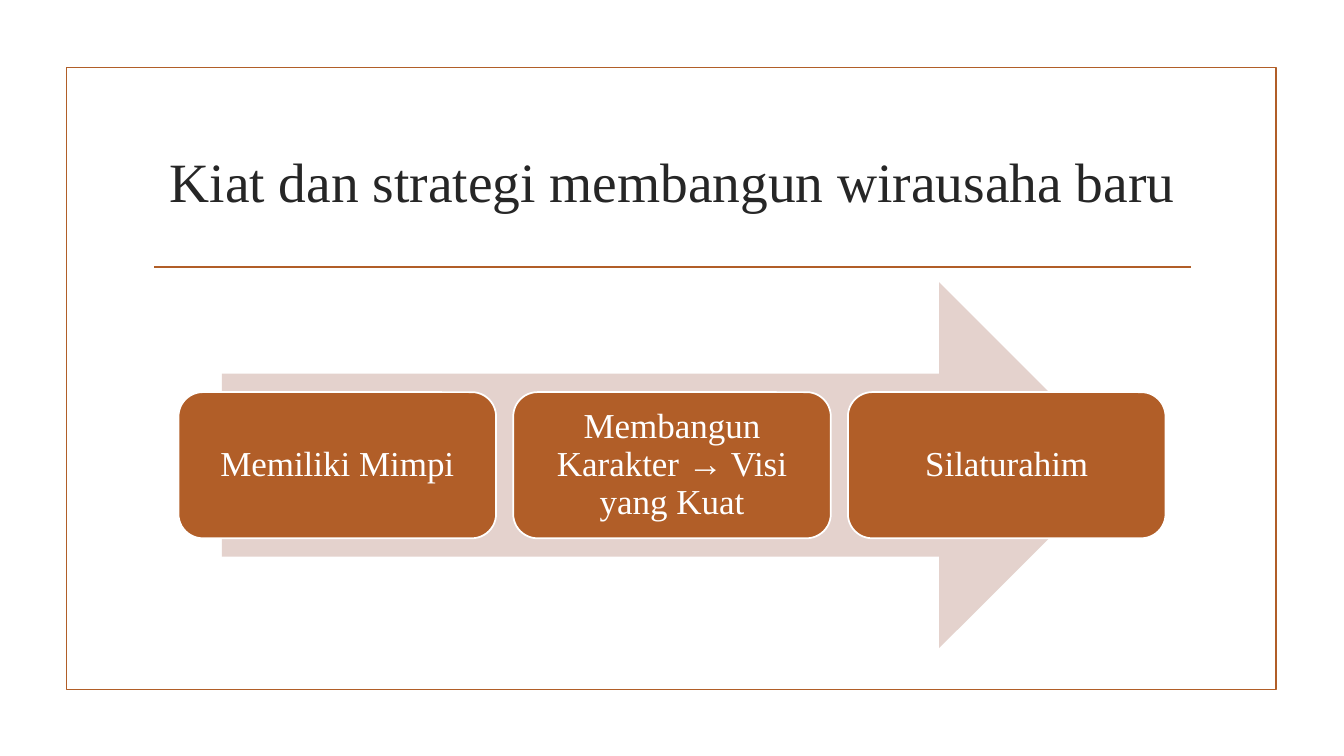
import pptx
import pptx.dml.color
import pptx.enum.shapes
import pptx.enum.text
import pptx.oxml.ns
import pptx.util
from lxml import etree

Inches = pptx.util.Inches
Pt = pptx.util.Pt
RGBColor = pptx.dml.color.RGBColor
Preset = pptx.enum.shapes.MSO_SHAPE

RUST = RGBColor(0xB1, 0x5E, 0x28)
BLUSH = RGBColor(0xE4, 0xD2, 0xCD)
WHITE = RGBColor(0xFF, 0xFF, 0xFF)
CHARCOAL = RGBColor(0x26, 0x26, 0x26)
FONT = "Times New Roman"
LINE_WIDTH = Pt(1.25)

STEPS = ["Memiliki Mimpi", "Membangun Karakter → Visi yang Kuat", "Silaturahim"]
STEP_LEFT = 1.77
STEP_PITCH = 3.32


def write_text(shape, text, size, color, line_spacing=1.0, inset=0.1):
    frame = shape.text_frame
    frame.word_wrap = True
    frame.vertical_anchor = pptx.enum.text.MSO_ANCHOR.MIDDLE
    frame.margin_left = frame.margin_right = Inches(inset)
    frame.margin_top = frame.margin_bottom = Inches(inset)
    paragraph = frame.paragraphs[0]
    paragraph.alignment = pptx.enum.text.PP_ALIGN.CENTER
    paragraph.line_spacing = line_spacing
    run = paragraph.add_run()
    run.text = text
    run.font.name = FONT
    run.font.size = Pt(size)
    run.font.color.rgb = color


def add_preset(slide, preset, left, top, width, height, fill=None, line=None):
    shape = slide.shapes.add_shape(
        preset, Inches(left), Inches(top), Inches(width), Inches(height)
    )
    shape.shadow.inherit = False
    if fill is None:
        shape.fill.background()
    else:
        shape.fill.solid()
        shape.fill.fore_color.rgb = fill
    if line is None:
        shape.line.fill.background()
    else:
        shape.line.color.rgb = line
        shape.line.width = LINE_WIDTH
    return shape


def add_rule(slide, left, right, top):
    rule = slide.shapes.add_connector(
        pptx.enum.shapes.MSO_CONNECTOR.STRAIGHT,
        Inches(left), Inches(top), Inches(right), Inches(top),
    )
    rule.line.color.rgb = RUST
    rule.line.width = LINE_WIDTH
    properties = rule._element.spPr
    etree.SubElement(properties, pptx.oxml.ns.qn("a:effectLst"))


def add_title(slide, text):
    title = slide.shapes.add_textbox(
        Inches(1.42), Inches(1.07), Inches(10.5), Inches(1.43)
    )
    write_text(title, text, size=39.6, color=CHARCOAL, inset=0.05)


def add_step(slide, index, text):
    left = STEP_LEFT + index * STEP_PITCH
    step = add_preset(
        slide, Preset.ROUNDED_RECTANGLE, left, 3.89, 3.15, 1.45, fill=RUST, line=WHITE
    )
    write_text(step, text, size=25, color=WHITE, line_spacing=0.9)


def main():
    presentation = pptx.Presentation()
    presentation.slide_width = Inches(13.33)
    presentation.slide_height = Inches(7.5)
    slide = presentation.slides.add_slide(presentation.slide_layouts[6])
    add_preset(slide, Preset.RECTANGLE, 0.66, 0.67, 12, 6.17, line=RUST)
    add_rule(slide, 1.53, 11.81, 2.65)
    add_title(slide, "Kiat dan strategi membangun wirausaha baru")
    add_preset(slide, Preset.RIGHT_ARROW, 2.2, 2.8, 8.93, 3.63, fill=BLUSH)
    for index, text in enumerate(STEPS):
        add_step(slide, index, text)
    presentation.save("out.pptx")


if __name__ == "__main__":
    main()
